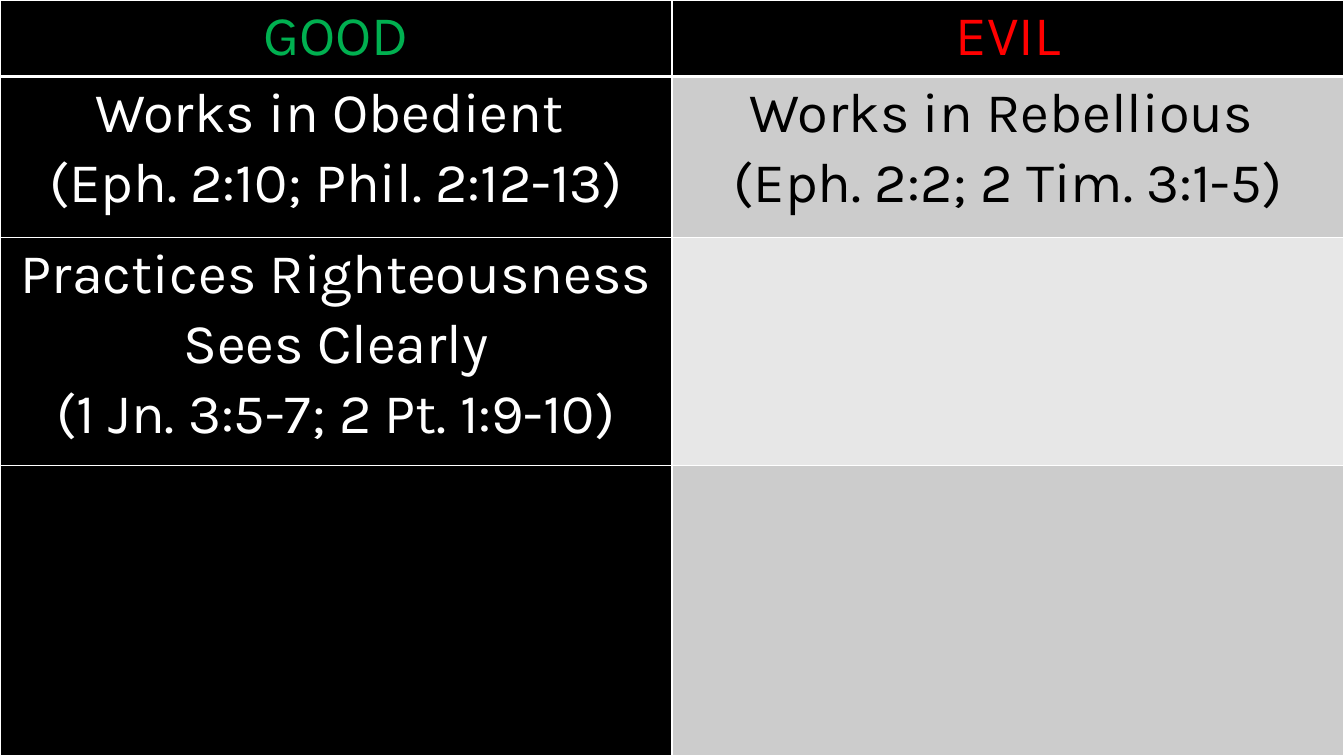
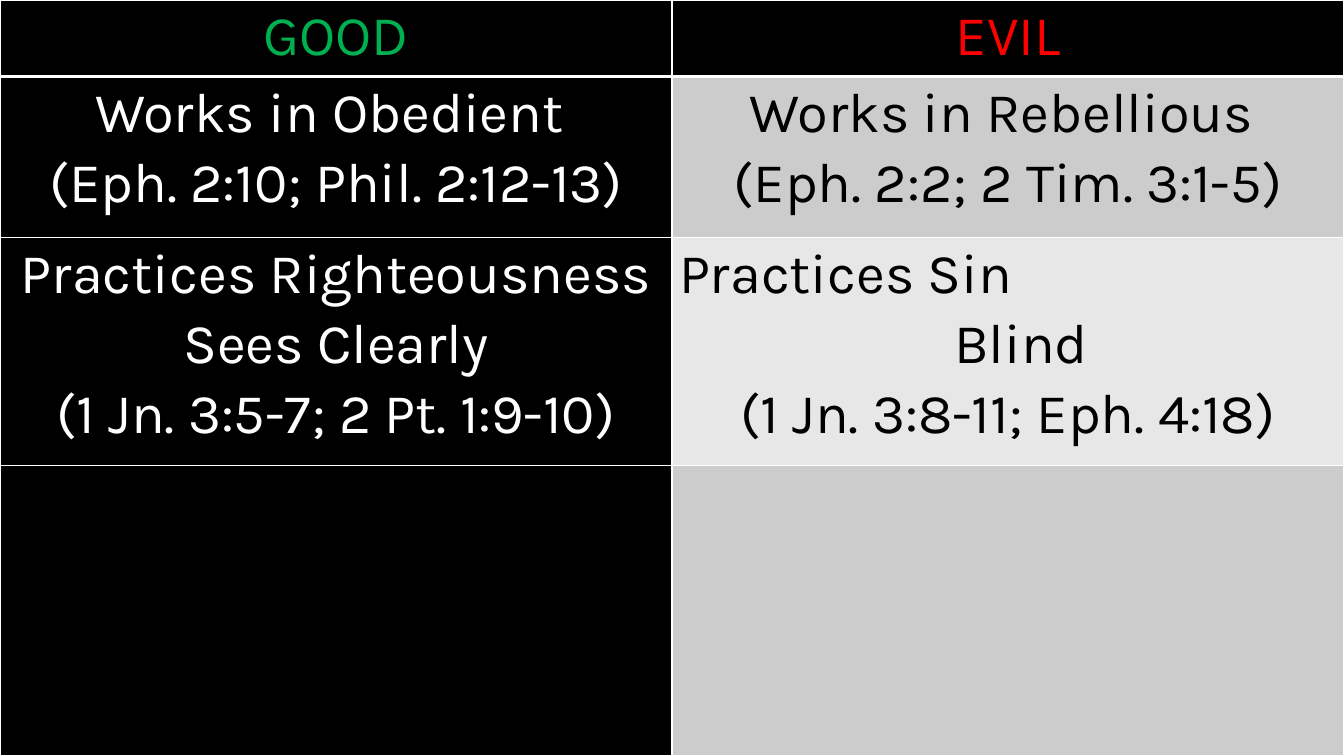
"""Build two slides that contrast good and evil in a two-column table."""
import dataclasses

import lxml.etree
import pptx
import pptx.dml.color
import pptx.enum.text
import pptx.oxml.ns
import pptx.slide
import pptx.table
import pptx.util

COLORS = {
    "black": "000000",
    "white": "FFFFFF",
    "green": "00B050",
    "red": "FF0000",
    "gray": "CCCCCC",
    "pale": "E7E7E7",
}
FONT = "Karla"
SLIDE_WIDTH = pptx.util.Inches(13.33)
SLIDE_HEIGHT = pptx.util.Inches(7.5)
ROW_HEIGHTS = (0.76, 1.6, 2.26, 2.88)
THIN, THICK = 1, 3
CENTER = pptx.enum.text.PP_ALIGN.CENTER
LEFT = pptx.enum.text.PP_ALIGN.LEFT


@dataclasses.dataclass(frozen=True)
class Line:
    text: str
    align: pptx.enum.text.PP_ALIGN = CENTER
    indent: float = 0


@dataclasses.dataclass(frozen=True)
class Entry:
    lines: tuple[Line, ...]
    fill: str
    ink: str


def good(*texts: str) -> Entry:
    return Entry(tuple(Line(text) for text in texts), "black", "white")


def evil(fill: str, *lines: Line) -> Entry:
    return Entry(lines, fill, "black")


SIN_LINES = (
    Line("Practices Sin", LEFT),
    Line("Blind", indent=0.26),
    Line("(1 Jn. 3:8-11; Eph. 4:18)"),
)


def contrast_rows(sin_lines: tuple[Line, ...]) -> list[tuple[Entry, Entry]]:
    return [
        (Entry((Line("GOOD"),), "black", "green"),
         Entry((Line("EVIL"),), "black", "red")),
        (good("Works in Obedient ", "(Eph. 2:10; Phil. 2:12-13)"),
         evil("gray", Line("Works in Rebellious "), Line("(Eph. 2:2; 2 Tim. 3:1-5)"))),
        (good("Practices Righteousness Sees Clearly", "(1 Jn. 3:5-7; 2 Pt. 1:9-10)"),
         evil("pale", *sin_lines)),
        (good(), evil("gray")),
    ]


def rgb(name: str) -> pptx.dml.color.RGBColor:
    return pptx.dml.color.RGBColor.from_string(COLORS[name])


def draw_borders(cell: pptx.table._Cell, top: float, bottom: float) -> None:
    properties = cell._tc.get_or_add_tcPr()
    widths = {"a:lnL": THIN, "a:lnR": THIN, "a:lnT": top, "a:lnB": bottom}
    qn = pptx.oxml.ns.qn
    for position, (tag, width) in enumerate(widths.items()):
        border = lxml.etree.Element(qn(tag), w=str(pptx.util.Pt(width)))
        paint = lxml.etree.SubElement(border, qn("a:solidFill"))
        lxml.etree.SubElement(paint, qn("a:srgbClr"), val=COLORS["white"])
        properties.insert(position, border)


def write_entry(cell: pptx.table._Cell, entry: Entry) -> None:
    cell.fill.solid()
    cell.fill.fore_color.rgb = rgb(entry.fill)
    cell.margin_left = cell.margin_right = pptx.util.Inches(0.07)
    cell.margin_top = cell.margin_bottom = 0
    frame = cell.text_frame
    for number, line in enumerate(entry.lines):
        paragraph = frame.add_paragraph() if number else frame.paragraphs[0]
        paragraph.text = line.text
        paragraph.alignment = line.align
        paragraph.line_spacing = 1.07
        if line.indent:
            paragraph._p.get_or_add_pPr().set("marL", str(pptx.util.Inches(line.indent)))
        paragraph.font.name = FONT
        paragraph.font.size = pptx.util.Pt(40)
        paragraph.font.bold = False
        paragraph.font.color.rgb = rgb(entry.ink)


def draw_contrast(slide: pptx.slide.Slide, rows: list[tuple[Entry, Entry]]) -> None:
    slide.background.fill.solid()
    slide.background.fill.fore_color.rgb = rgb("black")
    contrast = slide.shapes.add_table(
        len(rows), 2, 0, 0, SLIDE_WIDTH, SLIDE_HEIGHT).table
    contrast.first_row = contrast.horz_banding = False
    for row_number, (height, entries) in enumerate(zip(ROW_HEIGHTS, rows)):
        contrast.rows[row_number].height = pptx.util.Inches(height)
        top = THICK if row_number == 1 else THIN
        bottom = THICK if row_number == 0 else THIN
        for column_number, entry in enumerate(entries):
            cell = contrast.cell(row_number, column_number)
            write_entry(cell, entry)
            draw_borders(cell, top, bottom)


def main() -> None:
    deck = pptx.Presentation()
    deck.slide_width, deck.slide_height = SLIDE_WIDTH, SLIDE_HEIGHT
    blank = deck.slide_layouts.get_by_name("Blank")
    for sin_lines in ((), SIN_LINES):
        draw_contrast(deck.slides.add_slide(blank), contrast_rows(sin_lines))
    deck.save("out.pptx")


if __name__ == "__main__":
    main()
